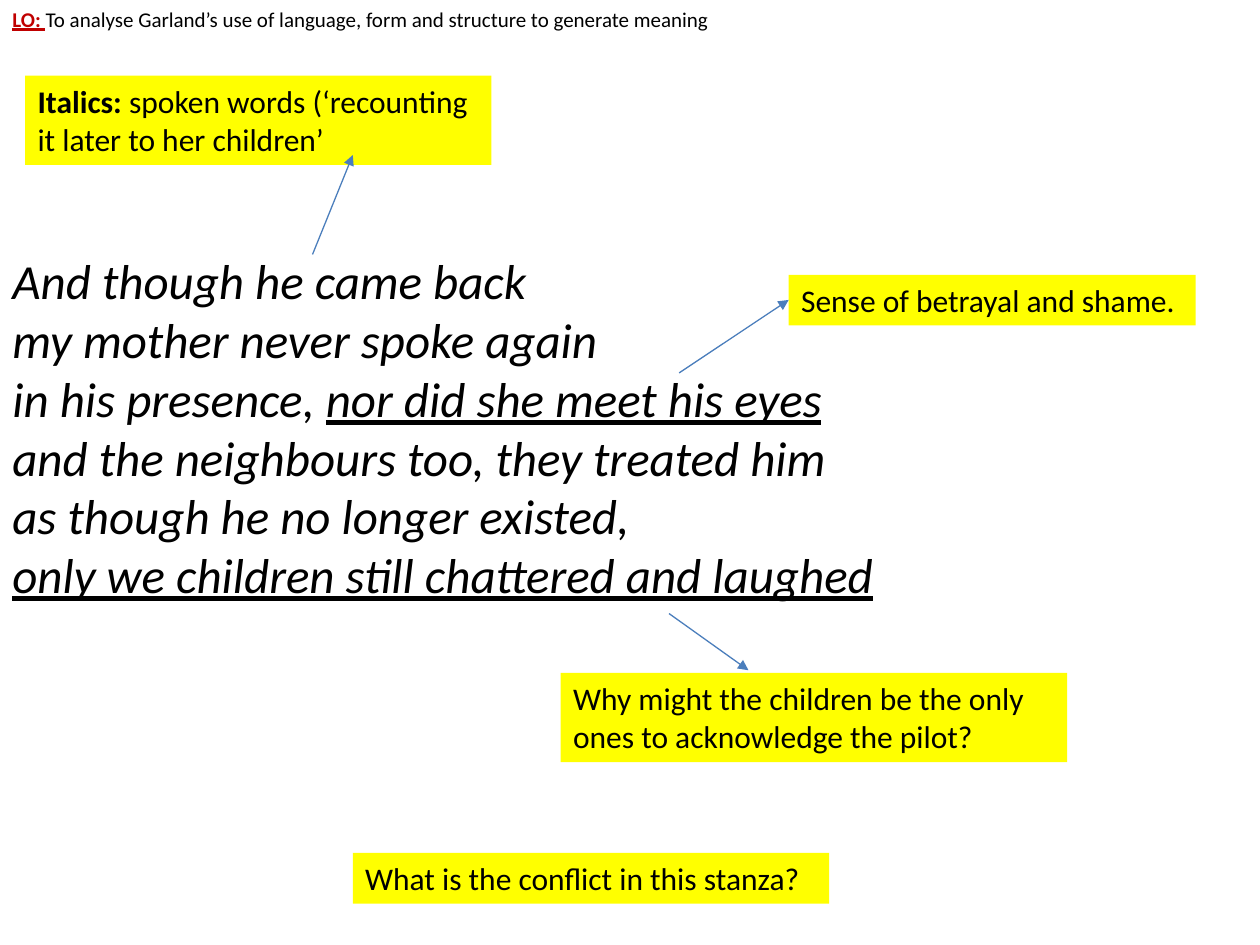
from lxml import etree
from pptx import Presentation
from pptx.dml.color import RGBColor
from pptx.enum.shapes import MSO_CONNECTOR
from pptx.enum.text import MSO_AUTO_SIZE
from pptx.oxml.ns import qn
from pptx.util import Pt

STRAIGHT = MSO_CONNECTOR.STRAIGHT
GROW = MSO_AUTO_SIZE.SHAPE_TO_FIT_TEXT

FONT = "Calibri"
BLACK, WHITE, RED = "000000", "FFFFFF", "C00000"
YELLOW, BLUE = "FFFF00", "4B7EBC"

# Each line of the stanza is a list of (text, underlined) pieces.
STANZA = [
    [("And though he came back", False)],
    [("my mother never spoke again", False)],
    [("in his presence, ", False), ("nor did she meet his eyes", True)],
    [("and the neighbours too, they treated him", False)],
    [("as though he no longer existed,", False)],
    [("only we children still chattered and laughed", True)],
]

# Box (left, top, width, height), bold lead-in, text, wraps
NOTES = [
    ((14.4, 43.2, 266.4, 51), "Italics: ",
     "spoken words (‘recounting it later to her children’", True),
    ((320.4, 384.5, 289.4, 51), "",
     "Why might the children be the only ones to acknowledge the pilot?", True),
    ((450.7, 157, 232.6, 29), "", "Sense of betrayal and shame.", True),
    ((201.6, 487.4, 272.2, 29), "", "What is the conflict in this stanza?", False),
]

# Start and end points
ARROWS = [
    ((178.6, 145.4), (201.6, 88.6)),
    ((388.1, 213.1), (450.7, 171.4)),
    ((382.3, 350.6), (427.7, 383)),
]


def color(hex_string):
    return RGBColor.from_string(hex_string)


def add_text_box(slide, box, size, fill, opacity=100, wraps=True):
    """Add a filled text box and return its first paragraph."""
    shape = slide.shapes.add_textbox(*(Pt(length) for length in box))
    shape.fill.solid()
    shape.fill.fore_color.rgb = color(fill)
    if opacity < 100:
        fill_element = shape.fill._xPr.find(qn("a:solidFill"))[0]
        etree.SubElement(fill_element, qn("a:alpha"), val=str(opacity * 1000))
    shape.text_frame.word_wrap = wraps
    shape.text_frame.auto_size = GROW
    paragraph = shape.text_frame.paragraphs[0]
    paragraph.font.name = FONT
    paragraph.font.size = Pt(size)
    paragraph.font.color.rgb = color(BLACK)
    return paragraph


def add_run(paragraph, text):
    run = paragraph.add_run()
    run.text = text
    return run


def add_objective(slide, box):
    paragraph = add_text_box(slide, box, 12, WHITE, opacity=88)
    properties = paragraph._p.get_or_add_pPr()
    properties.set("marL", str(Pt(22.5)))
    properties.set("indent", str(-Pt(22.5)))
    label = add_run(paragraph, "LO: ")
    label.font.bold = True
    label.font.underline = True
    label.font.color.rgb = color(RED)
    add_run(paragraph, "To analyse Garland’s use of language, form and "
                       "structure to generate meaning")


def add_stanza(slide, box):
    paragraph = add_text_box(slide, box, 28, WHITE, opacity=88)
    paragraph.font.italic = True
    for index, line in enumerate(STANZA):
        if index:
            paragraph.add_line_break()
        for text, underlined in line:
            add_run(paragraph, text).font.underline = underlined


def add_note(slide, box, lead, text, wraps):
    paragraph = add_text_box(slide, box, 18, YELLOW, wraps=wraps)
    if lead:
        add_run(paragraph, lead).font.bold = True
    add_run(paragraph, text)


def add_arrow(slide, start, end):
    points = (Pt(length) for length in start + end)
    connector = slide.shapes.add_connector(STRAIGHT, *points)
    connector.line.color.rgb = color(BLUE)
    connector.line.width = Pt(0.75)
    line_element = connector.line._get_or_add_ln()
    etree.SubElement(line_element, qn("a:tailEnd"), type="triangle")
    etree.SubElement(connector._element.spPr, qn("a:effectLst"))


def main():
    presentation = Presentation()
    presentation.slide_width = Pt(720)
    presentation.slide_height = Pt(540)
    slide = presentation.slides.add_slide(presentation.slide_layouts[6])
    add_objective(slide, (0, 0, 720, 21.8))
    add_stanza(slide, (0, 139.7, 720, 211))
    for note in NOTES:
        add_note(slide, *note)
    for start, end in ARROWS:
        add_arrow(slide, start, end)
    presentation.save("out.pptx")


if __name__ == "__main__":
    main()
